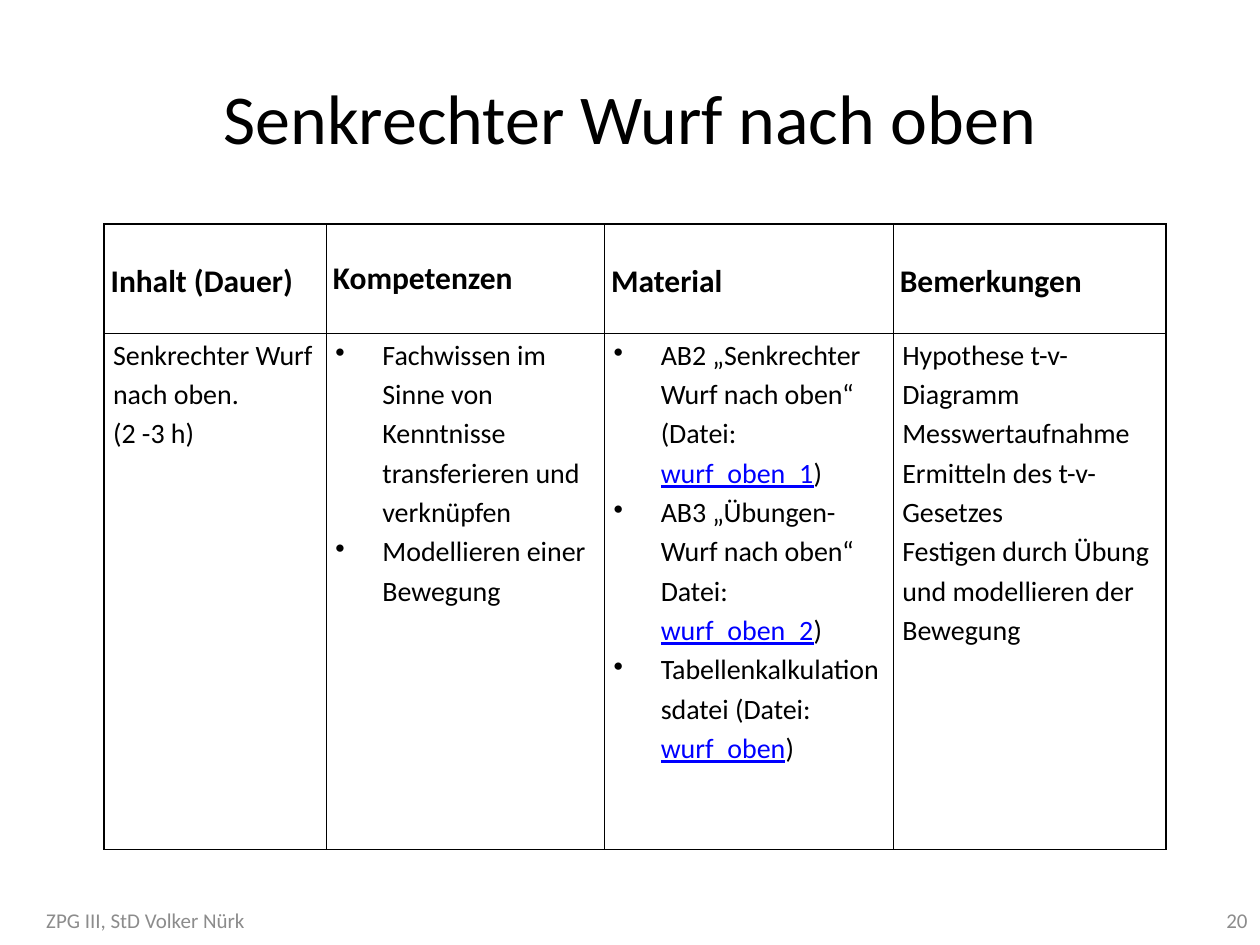
"""Builds a lesson-plan slide on the vertical upward throw."""
import pptx
import pptx.dml.color
import pptx.enum.text
import pptx.oxml
import pptx.oxml.ns
import pptx.util
from pptx.util import Cm, Pt

RGBColor = pptx.dml.color.RGBColor
ANCHOR = pptx.enum.text.MSO_ANCHOR
ALIGN = pptx.enum.text.PP_ALIGN

BLACK = RGBColor(0x00, 0x00, 0x00)
GREY = RGBColor(0x8C, 0x8C, 0x8C)
LINK = RGBColor(0x00, 0x00, 0xFF)
FONT = "Calibri"

COLUMN_WIDTHS = (4.48, 5.61, 5.82, 5.5)
ROW_HEIGHTS = (2.2, 10.4)
HEADERS = ("Inhalt (Dauer)", "Kompetenzen", "Material", "Bemerkungen")
BODY = (
    (("Senkrechter Wurf nach oben.",), ("(2 -3 h)",)),
    (
        ("Fachwissen im Sinne von Kenntnisse transferieren und verknüpfen",),
        ("Modellieren einer Bewegung",),
    ),
    (
        ("AB2 „Senkrechter Wurf nach oben“ (Datei: ", "wurf_oben_1", ")"),
        ("AB3 „Übungen-Wurf nach oben“ Datei: ", "wurf_oben_2", ")"),
        ("Tabellenkalkulationsdatei (Datei: ", "wurf_oben", ")"),
    ),
    (
        ("Hypothese t-v-Diagramm",),
        ("Messwertaufnahme",),
        ("Ermitteln des t-v-Gesetzes",),
        ("Festigen durch Übung und modellieren der Bewegung",),
    ),
)
BULLETED_COLUMNS = (1, 2)


def set_font(font, size, color, bold=False):
    font.name = FONT
    font.size = Pt(size)
    font.bold = bold
    font.color.rgb = color


def add_text(slide, box, text, size, color, align):
    sp = slide.shapes.add_textbox(*(Cm(v) for v in box))
    tf = sp.text_frame
    tf.word_wrap = True
    tf.vertical_anchor = ANCHOR.MIDDLE
    p = tf.paragraphs[0]
    p.text = text
    p.alignment = align
    set_font(p.font, size, color)


def add_borders(cell):
    tc_pr = cell._tc.get_or_add_tcPr()
    for i, side in enumerate(("lnL", "lnR", "lnT", "lnB")):
        ln = pptx.oxml.parse_xml(
            f'<a:{side} {pptx.oxml.ns.nsdecls("a")} w="{Pt(1)}">'
            f'<a:solidFill><a:srgbClr val="{BLACK}"/></a:solidFill></a:{side}>'
        )
        tc_pr.insert(i, ln)


def add_bullet(p):
    p_pr = p._p.get_or_add_pPr()
    p_pr.set("marL", str(Cm(0.95)))
    p_pr.set("indent", str(-Cm(0.95)))
    bullet = pptx.oxml.parse_xml(f'<a:buChar {pptx.oxml.ns.nsdecls("a")} char="•"/>')
    p_pr.insert_element_before(bullet, "a:tabLst", "a:defRPr", "a:extLst")


def fill_cell(cell, paragraphs, size, margin, bold=False, bulleted=False):
    cell.fill.background()
    cell.margin_left = cell.margin_right = Cm(margin)
    cell.margin_top = cell.margin_bottom = 0
    add_borders(cell)
    tf = cell.text_frame
    for i, parts in enumerate(paragraphs):
        p = tf.add_paragraph() if i else tf.paragraphs[0]
        p.line_spacing = 1.15
        for j, part in enumerate(parts):
            r = p.add_run()
            r.text = part
            is_link = j == 1
            set_font(r.font, size, LINK if is_link else BLACK, bold)
            r.font.underline = is_link
        if bulleted:
            add_bullet(p)


def add_plan_table(slide):
    frame = slide.shapes.add_table(
        len(ROW_HEIGHTS), len(COLUMN_WIDTHS), Cm(2.1), Cm(4.52),
        Cm(sum(COLUMN_WIDTHS)), Cm(sum(ROW_HEIGHTS)),
    )
    table = frame.table
    table.first_row = table.horz_banding = False
    for row, height in zip(table.rows, ROW_HEIGHTS):
        row.height = Cm(height)
    for i, width in enumerate(COLUMN_WIDTHS):
        table.columns[i].width = Cm(width)
        header = table.cell(0, i)
        fill_cell(header, ((HEADERS[i],),), 18, 0.13, bold=True)
        header.vertical_anchor = ANCHOR.MIDDLE
        fill_cell(table.cell(1, i), BODY[i], 16, 0.18, bulleted=i in BULLETED_COLUMNS)
    competences = table.cell(0, 1)
    competences.vertical_anchor = ANCHOR.TOP
    competences.margin_top = Cm(0.6)


def main():
    prs = pptx.Presentation()
    prs.slide_width, prs.slide_height = Cm(25.4), Cm(19.05)
    slide = prs.slides.add_slide(prs.slide_layouts[6])
    add_text(slide, (1.27, 0.76, 22.86, 3.18), "Senkrechter Wurf nach oben",
             40, BLACK, ALIGN.CENTER)
    add_plan_table(slide)
    add_text(slide, (-1.09, 18.03, 8.05, 1.02), "ZPG III, StD Volker Nürk",
             12, GREY, ALIGN.CENTER)
    add_text(slide, (19.48, 18.03, 5.92, 1.02), "20", 12, GREY, ALIGN.RIGHT)
    prs.save("out.pptx")


if __name__ == "__main__":
    main()
